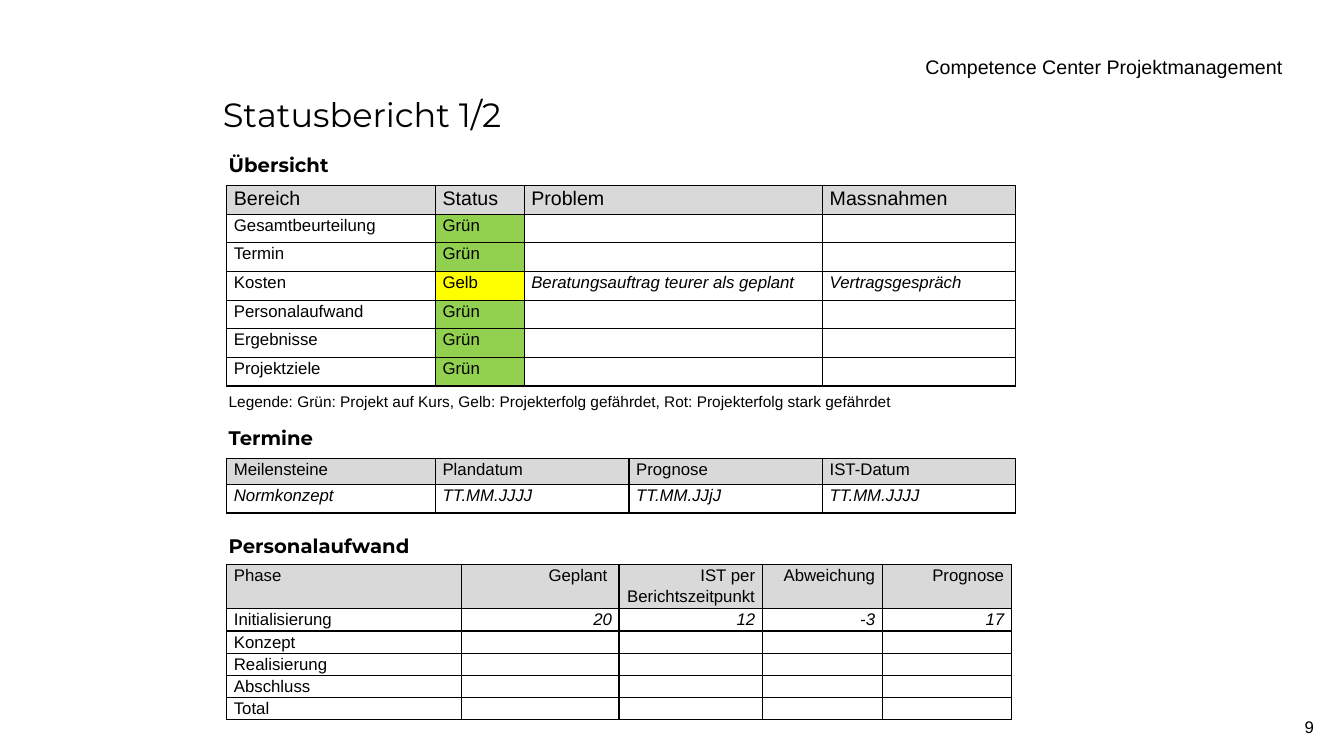
from lxml.etree import SubElement
from pptx import Presentation
from pptx.dml.color import RGBColor
from pptx.enum.text import MSO_ANCHOR, PP_ALIGN
from pptx.oxml.ns import qn
from pptx.util import Inches, Pt

COLORS = {"ink": "000000", "head": "D9D9D9", "Grün": "92D050", "Gelb": "FFFF00"}
LEFT, RIGHT, JUST = PP_ALIGN.LEFT, PP_ALIGN.RIGHT, PP_ALIGN.JUSTIFY


class Report:
    body, accent = "Arial", "Montserrat"

    def __init__(self, deck):
        self.slide = deck.slides.add_slide(deck.slide_layouts[5])

    def label(self, para, text, align=LEFT, **style):
        para.text = text
        para.alignment = align
        for run in para.runs:
            for key, value in ({"name": self.body} | style).items():
                setattr(run.font, key, value)
            run.font.color.rgb = RGBColor.from_string(COLORS["ink"])

    def title(self, text, *box):
        shape = self.slide.shapes.title
        for key, value in zip(("left", "top", "width", "height"), box):
            setattr(shape, key, Inches(value))
        shape.text_frame.vertical_anchor = MSO_ANCHOR.MIDDLE
        self.label(shape.text_frame.paragraphs[0], text, name=self.accent, size=Pt(24))

    def text(self, text, *box, size=14, align=LEFT, wrap=True, **style):
        frame = self.slide.shapes.add_textbox(*map(Inches, box)).text_frame
        frame.word_wrap = wrap
        self.label(frame.paragraphs[0], text, align, size=Pt(size), **style)

    def heading(self, text, top, width):
        self.text(text, 2.17, top, width, 0.34, wrap=False, name=self.accent, bold=True)

    def table(self, top, widths, heights, rows, align=JUST, head=12):
        """Rows hold cell texts; a leading underscore marks italics."""
        box = map(Inches, (2.25, top, sum(widths), sum(heights)))
        grid = self.slide.shapes.add_table(len(heights), len(widths), *box).table
        grid.first_row = grid.horz_banding = False
        for col, width in zip(grid.columns, widths):
            col.width = Inches(width)
        for r, (height, row) in enumerate(zip(heights, rows)):
            grid.rows[r].height = Inches(height)
            for c in range(len(widths)):
                text = row[c] if c < len(row) else ""
                self.cell(grid.cell(r, c), text, align if c else JUST,
                          COLORS["head"] if r == 0 else COLORS.get(text),
                          12 if r else head)

    def cell(self, cell, text, align, fill, size):
        margins = {"margin_left": 0.07, "margin_right": 0.07,
                   "margin_top": 0, "margin_bottom": 0}
        for key, value in margins.items():
            setattr(cell, key, Inches(value))
        para = cell.text_frame.paragraphs[0]
        self.label(para, text.lstrip("_"), align, size=Pt(size), italic=text.startswith("_"))
        para.line_spacing, para.space_after = 1.1, Pt(6)
        if not text:
            SubElement(para._p, qn("a:endParaRPr"), sz=str(size * 100))
        # Borders come before the fill in the cell properties
        props = cell._tc.get_or_add_tcPr()
        for side in ("lnL", "lnR", "lnT", "lnB"):
            line = SubElement(props, qn(f"a:{side}"), w=str(Pt(1)))
            solid = SubElement(line, qn("a:solidFill"))
            SubElement(solid, qn("a:srgbClr"), val=COLORS["ink"])
        if fill:
            cell.fill.solid()
            cell.fill.fore_color.rgb = RGBColor.from_string(fill)
        else:
            cell.fill.background()


def main():
    deck = Presentation()
    deck.slide_width, deck.slide_height = Inches(13.33), Inches(7.5)
    page = Report(deck)

    # Page frame
    page.title("Statusbericht 1/2", 2.11, 0.84, 10.48, 0.59)
    page.text("Competence Center Projektmanagement", 9.08, 0.5, 4.25, 0.34)
    page.text("9", 8.77, 7.06, 4.36, 0.3, size=12, align=RIGHT)

    # Overview
    page.heading("Übersicht", 1.47, 1.25)
    page.table(1.84, [2.07, 0.88, 2.96, 1.91], [1.99 / 7] * 7, [
        ["Bereich", "Status", "Problem", "Massnahmen"],
        ["Gesamtbeurteilung", "Grün"],
        ["Termin", "Grün"],
        ["Kosten", "Gelb", "_Beratungsauftrag teurer als geplant", "_Vertragsgespräch"],
        ["Personalaufwand", "Grün"],
        ["Ergebnisse", "Grün"],
        ["Projektziele", "Grün"],
    ], head=14)
    page.text("Legende: Grün: Projekt auf Kurs, Gelb: Projekterfolg gefährdet, "
              "Rot: Projekterfolg stark gefährdet", 2.17, 3.84, 7.3, 0.47, size=11)

    # Dates
    page.heading("Termine", 4.18, 1.09)
    page.table(4.55, [2.07, 1.92, 1.92, 1.91], [0.26, 0.28], [
        ["Meilensteine", "Plandatum", "Prognose", "IST-Datum"],
        ["_Normkonzept", "_TT.MM.JJJJ", "_TT.MM.JJjJ", "_TT.MM.JJJJ"],
    ])

    # Staff effort
    page.heading("Personalaufwand", 5.25, 2.06)
    page.table(5.6, [2.33, 1.56, 1.42, 1.19, 1.28], [0.44] + [0.22] * 5, [
        ["Phase", "Geplant ", "IST per\vBerichtszeitpunkt", "Abweichung", "Prognose"],
        ["Initialisierung", "_20", "_12", "_-3", "_17"],
        ["Konzept"], ["Realisierung"], ["Abschluss"], ["Total"],
    ], align=RIGHT)

    deck.save("out.pptx")


if __name__ == "__main__":
    main()
